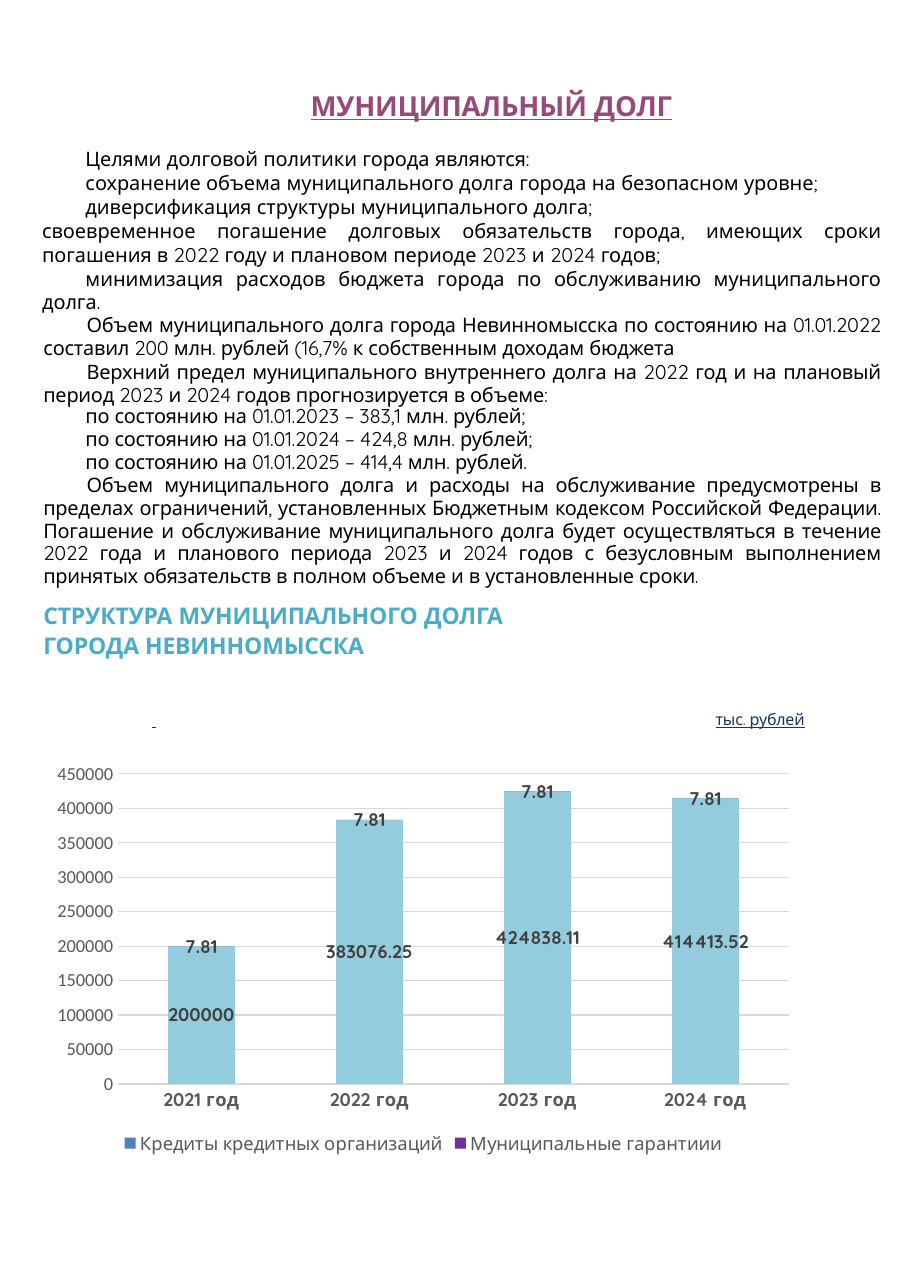
from dataclasses import dataclass

from lxml.etree import SubElement
from pptx import Presentation
from pptx.chart.data import CategoryChartData
from pptx.dml.color import RGBColor
from pptx.enum.chart import XL_CHART_TYPE, XL_LEGEND_POSITION, XL_TICK_MARK
from pptx.enum.text import MSO_ANCHOR, MSO_AUTO_SIZE, PP_ALIGN
from pptx.oxml.ns import qn
from pptx.text.text import Font, TextFrame
from pptx.util import Cm, Pt

PLUM = RGBColor(0x96, 0x4A, 0x7B)
TEAL = RGBColor(0x4A, 0xAC, 0xC5)
NAVY = RGBColor(0x16, 0x37, 0x5E)
BLACK = RGBColor(0, 0, 0)
DARK_GREY = RGBColor(0x40, 0x40, 0x40)
GREY = RGBColor(0x59, 0x59, 0x59)
GRID_GREY = RGBColor(0xD9, 0xD9, 0xD9)
BLUE = RGBColor(0x4F, 0x81, 0xBD)
PURPLE = RGBColor(0x70, 0x30, 0xA0)
LIGHT_BLUE = RGBColor(0x93, 0xCD, 0xDD)
TEXT_FONT = "Quicksand"


@dataclass(frozen=True)
class Item:
    """One paragraph of the debt policy; lengths in cm, spacing in points."""
    text: str
    left: float = 0
    first: float = 1
    justified: bool = True
    line: float | Pt = 1.0
    before: float = 0
    spacing: float = -0.1
    size: float = 13
    color: RGBColor = BLACK
    bold: bool = False


@dataclass(frozen=True)
class DebtSeries:
    name: str
    values: tuple[float, ...]
    color: RGBColor
    bar_color: RGBColor


POLICY = [
    Item("Целями долговой политики города являются:", spacing=0),
    Item("сохранение объема муниципального долга города на безопасном уровне;", spacing=0),
    Item("диверсификация структуры муниципального долга;", spacing=0),
    Item("своевременное погашение долговых обязательств города, имеющих сроки "
         "погашения в 2022 году и плановом периоде 2023 и 2024 годов;", first=0, spacing=0),
    Item("минимизация расходов бюджета города по обслуживанию муниципального долга.",
         spacing=0),
    Item("Объем муниципального долга города Невинномысска по состоянию на 01.01.2022 "
         "составил 200 млн. рублей (16,7% к собственным доходам бюджета",
         left=0.03, line=0.96),
    Item("Верхний предел муниципального внутреннего долга на 2022 год и на плановый "
         "период 2023 и 2024 годов прогнозируется в объеме:",
         left=0.03, line=Pt(15), before=0.2),
    *(Item(f"по состоянию на 01.01.{year} – {limit} млн. рублей{end}",
           left=1, first=0, justified=False, line=Pt(height))
      for year, limit, end, height in ((2023, "383,1", ";", 14.2),
                                       (2024, "424,8", ";", 14.9),
                                       (2025, "414,4", ".", 14.9))),
    Item("Объем муниципального долга и расходы на обслуживание предусмотрены в пределах "
         "ограничений, установленных Бюджетным кодексом Российской Федерации. Погашение "
         "и обслуживание муниципального долга будет осуществляться в течение 2022 года "
         "и планового периода 2023 и 2024 годов с безусловным выполнением принятых "
         "обязательств в полном объеме и в установленные сроки.",
         left=0.03, line=Pt(14.9), before=0.1),
    Item("СТРУКТУРА МУНИЦИПАЛЬНОГО ДОЛГА\vГОРОДА НЕВИННОМЫССКА", left=0.03, first=0,
         justified=False, line=1.1, before=7.1, size=15, color=TEAL, bold=True),
]
YEARS = ("2021 год", "2022 год", "2023 год", "2024 год")
DEBT = [
    DebtSeries("Кредиты кредитных организаций",
               (200000, 383076.25, 424838.11, 414413.52), BLUE, LIGHT_BLUE),
    DebtSeries("Муниципальные гарантиии", (7.81,) * len(YEARS), PURPLE, PURPLE),
]


def place(shape, left: float, top: float, width: float, height: float) -> None:
    shape.left, shape.top, shape.width, shape.height = map(Cm, (left, top, width, height))


def prepare(frame: TextFrame) -> None:
    frame.word_wrap = True
    frame.auto_size = MSO_AUTO_SIZE.NONE
    frame.vertical_anchor = MSO_ANCHOR.TOP
    frame.margin_left = frame.margin_right = frame.margin_bottom = 0
    frame.margin_top = Cm(0.03)


def style(font: Font, size: float, color: RGBColor, bold: bool = False,
          name: str = TEXT_FONT) -> None:
    font.name, font.size, font.bold = name, Pt(size), bold
    font.color.rgb = color


def track(run, points: float) -> None:
    run._r.get_or_add_rPr().set("spc", str(round(points * 100)))


def add_title(slide) -> None:
    title = slide.shapes.title
    place(title, 7.16, 2.03, 13.13, 1.1)
    prepare(title.text_frame)
    title.text_frame.text = "МУНИЦИПАЛЬНЫЙ ДОЛГ"
    heading = title.text_frame.paragraphs[0]
    heading.alignment = PP_ALIGN.LEFT
    style(heading.runs[0].font, 18, PLUM, bold=True)
    heading.runs[0].font.underline = True
    track(heading.runs[0], -0.1)


def add_policy(slide) -> None:
    policy = slide.placeholders[1]
    place(policy, 0.97, 3.35, 19.33, 12.5)
    frame = policy.text_frame
    prepare(frame)
    for number, item in enumerate(POLICY):
        paragraph = frame.add_paragraph() if number else frame.paragraphs[0]
        paragraph.text = item.text
        paragraph.alignment = PP_ALIGN.JUSTIFY if item.justified else PP_ALIGN.LEFT
        paragraph.line_spacing = item.line
        paragraph.space_before = Pt(item.before)
        properties = paragraph._p.get_or_add_pPr()
        properties.set("marL", str(Cm(item.left)))
        properties.set("indent", str(Cm(item.first)))
        SubElement(properties, qn("a:buNone"))
        for run in paragraph.runs:
            style(run.font, item.size, item.color, item.bold)
            track(run, item.spacing)


def add_unit(slide) -> None:
    unit = slide.shapes.add_textbox(Cm(3.5), Cm(16.26), Cm(15.32), Cm(0.56))
    prepare(unit.text_frame)
    paragraph = unit.text_frame.paragraphs[0]
    tabs = SubElement(paragraph._p.get_or_add_pPr(), qn("a:tabLst"))
    SubElement(tabs, qn("a:tab"), pos=str(Cm(13)), algn="l")
    for text, size, name in ((" \t", 12.5, "Times New Roman"),
                             ("тыс. рублей", 10.5, TEXT_FONT)):
        run = paragraph.add_run()
        run.text = text
        style(run.font, size, NAVY, name=name)
        run.font.underline = True
        track(run, -0.1)


def add_debt_chart(slide) -> None:
    data = CategoryChartData()
    data.categories = YEARS
    for debt in DEBT:
        data.add_series(debt.name, debt.values)
    chart = slide.shapes.add_chart(XL_CHART_TYPE.COLUMN_STACKED, Cm(0.97), Cm(17.4),
                                   Cm(17.58), Cm(9.32), data).chart
    style(chart.font, 10, BLACK, name="Calibri")
    chart.has_title = False

    # Axes and legend
    years, amounts = chart.category_axis, chart.value_axis
    for axis in (years, amounts):
        axis.major_tick_mark = axis.minor_tick_mark = XL_TICK_MARK.NONE
        axis.format.line.fill.background()
    style(years.tick_labels.font, 12, GREY, bold=True)
    style(amounts.tick_labels.font, 12, GREY, name="Calibri")
    grid = amounts.major_gridlines.format.line
    grid.color.rgb, grid.width = GRID_GREY, Pt(0.75)
    chart.has_legend = True
    chart.legend.position = XL_LEGEND_POSITION.BOTTOM
    chart.legend.include_in_layout = False
    style(chart.legend.font, 12, GREY)

    # Columns
    plot = chart.plots[0]
    plot.gap_width, plot.overlap, plot.vary_by_categories = 150, 100, False
    for series, debt in zip(plot.series, DEBT):
        series.format.fill.solid()
        series.format.fill.fore_color.rgb = debt.color
        if debt.bar_color != debt.color:
            for index in range(len(YEARS)):
                bar = series.points[index].format.fill
                bar.solid()
                bar.fore_color.rgb = debt.bar_color
        series.data_labels.show_value = True
        style(series.data_labels.font, 12, DARK_GREY, bold=True)


def main() -> None:
    deck = Presentation()
    deck.slide_width, deck.slide_height = Cm(20.98), Cm(29.69)
    slide = deck.slides.add_slide(deck.slide_layouts[1])
    add_title(slide)
    add_policy(slide)
    add_unit(slide)
    add_debt_chart(slide)
    deck.save("out.pptx")


if __name__ == "__main__":
    main()
